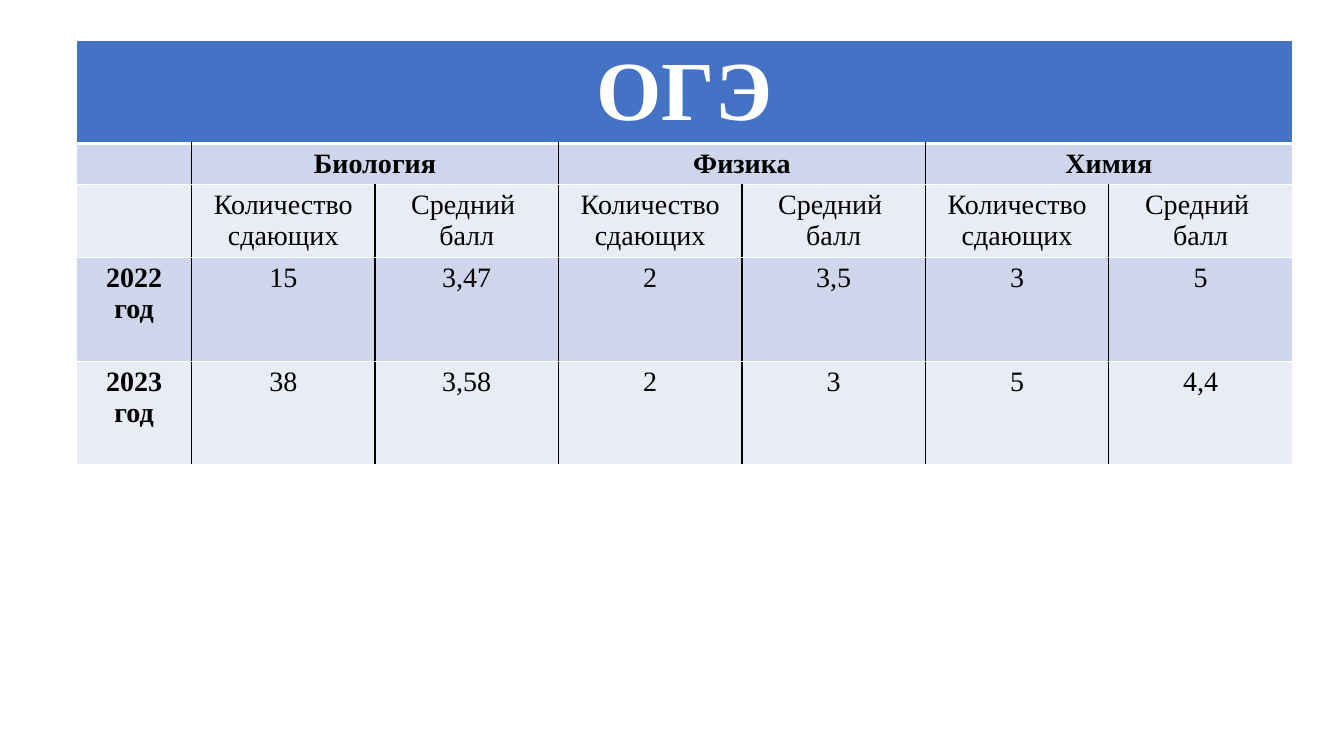
from lxml import etree
from pptx import Presentation
from pptx import util as u
from pptx.dml.color import RGBColor
from pptx.enum import text
from pptx.oxml.ns import qn

WHITE, BLACK = "FFFFFF", "000000"
HEADER_FILL = "4472C4"
BAND_FILLS = ["CFD5EA", "E9EBF5"]

SUBJECTS = ["Биология", "Физика", "Химия"]
MEASURES = ["Количество сдающих", "Средний \nбалл"]
RESULTS = [
    ["2022 год", "15", "3,47", "2", "3,5", "3", "5"],
    ["2023 год", "38", "3,58", "2", "3", "5", "4,4"],
]
COLUMN_WIDTHS = [1.14] + [1.82] * 6
ROW_HEIGHTS = [1.02, 0.41, 0.72, 1.03, 1.03]


def color(hex_value):
    return RGBColor.from_string(hex_value)


def write(frame, content, font="Times New Roman", size=20, bold=False, fill=BLACK):
    """Fill a text frame with centred text, one paragraph per line."""
    for index, line in enumerate(content.split("\n")):
        paragraph = frame.paragraphs[0] if index == 0 else frame.add_paragraph()
        paragraph.alignment = text.PP_ALIGN.CENTER
        run = paragraph.add_run()
        run.text = line
        run.font.name = font
        run.font.size = u.Pt(size)
        run.font.bold = bold
        run.font.color.rgb = color(fill)


class ResultsSlide:
    def __init__(self, presentation):
        self.slide = presentation.slides.add_slide(presentation.slide_layouts[6])

    def table(self, left, top, widths, heights):
        frame = self.slide.shapes.add_table(
            len(heights), len(widths), u.Inches(left), u.Inches(top),
            u.Inches(sum(widths)), u.Inches(sum(heights)))
        self.grid = frame.table
        self.grid.first_row = False
        self.grid.horz_banding = False
        for column, width in zip(self.grid.columns, widths):
            column.width = u.Inches(width)
        for row, height in zip(self.grid.rows, heights):
            row.height = u.Inches(height)

    def border(self, cell, side, hex_value, width):
        properties = cell._tc.get_or_add_tcPr()
        line = etree.SubElement(properties, qn(f"a:ln{side}"), w=str(u.Pt(width)))
        fill = etree.SubElement(line, qn("a:solidFill"))
        etree.SubElement(fill, qn("a:srgbClr"), val=hex_value)

    def cell(self, row, column, content="", span=1, **style):
        cell = self.grid.cell(row, column)
        last = column + span - 1
        if span > 1:
            cell.merge(self.grid.cell(row, last))

        # White outer edges and row lines, black lines between columns
        self.border(cell, "L", BLACK if column > 0 else WHITE, 1)
        self.border(cell, "R", BLACK if last < len(COLUMN_WIDTHS) - 1 else WHITE, 1)
        self.border(cell, "T", WHITE, 3 if row == 1 else 1)
        self.border(cell, "B", WHITE, 3 if row == 0 else 1)

        cell.fill.solid()
        cell.fill.fore_color.rgb = color(
            HEADER_FILL if row == 0 else BAND_FILLS[(row - 1) % 2])
        if content:
            write(cell.text_frame, content, **style)


def main():
    presentation = Presentation()
    presentation.slide_width = u.Inches(13.33)
    presentation.slide_height = u.Inches(7.5)
    results = ResultsSlide(presentation)
    results.table(0.76, 0.4, COLUMN_WIDTHS, ROW_HEIGHTS)

    # Exam name across the whole table
    results.cell(0, 0, "ОГЭ", span=len(COLUMN_WIDTHS), size=60, bold=True, fill=WHITE)

    # Subjects, each above its two measures
    results.cell(1, 0)
    results.cell(2, 0)
    for index, subject in enumerate(SUBJECTS):
        first = 1 + index * len(MEASURES)
        results.cell(1, first, subject, span=len(MEASURES), bold=True)
        for offset, measure in enumerate(MEASURES):
            results.cell(2, first + offset, measure)

    # Results by year
    for row, values in enumerate(RESULTS, start=3):
        for column, value in enumerate(values):
            results.cell(row, column, value, bold=column == 0)

    presentation.save("out.pptx")


if __name__ == "__main__":
    main()
